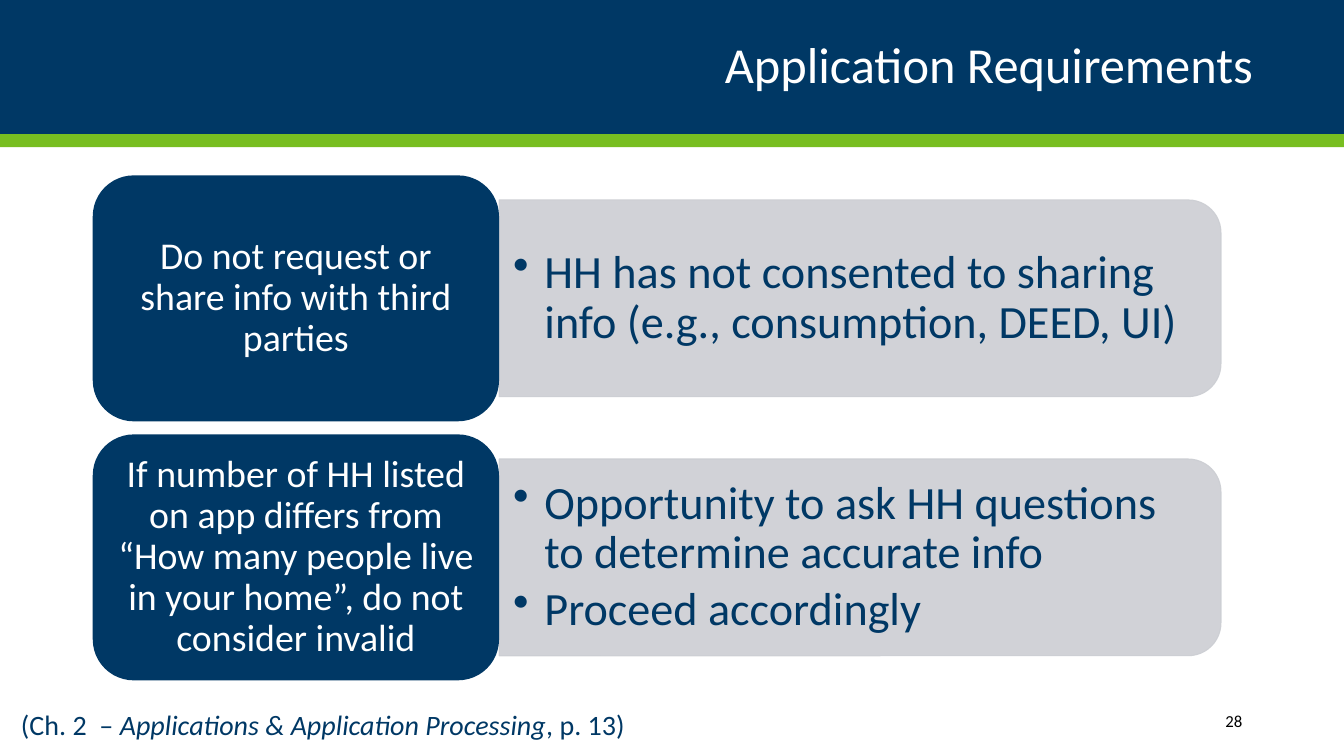
from pptx import Presentation
from pptx.dml.color import RGBColor
from pptx.enum.shapes import MSO_SHAPE as Shape
from pptx.enum.text import MSO_ANCHOR as Anchor, MSO_AUTO_SIZE as AutoSize, PP_ALIGN as Align
from pptx.oxml.ns import qn
from pptx.util import Inches, Pt
from lxml.etree import SubElement

TITLE = "Application Requirements"
ROWS = [
    ("Do not request or share info with third parties",
     ["HH has not consented to sharing info (e.g., consumption, DEED, UI)"]),
    ("If number of HH listed on app differs from “How many people live in your home”, "
     "do not consider invalid",
     ["Opportunity to ask HH questions to determine accurate info", "Proceed accordingly"]),
]
REFERENCE = [("(Ch. 2\u00a0 – ", False), ("Applications & Application Processing", True),
             (", p. 13)", False)]
PAGE_NUMBER = "28"

FONT = "Calibri"
NAVY = RGBColor(0x00, 0x38, 0x65)
GREEN = RGBColor(0x78, 0xBE, 0x21)
GRAY = RGBColor(0xCC, 0xCE, 0xD3)
WHITE = RGBColor(0xFF, 0xFF, 0xFF)
BLACK = RGBColor(0x00, 0x00, 0x00)

WIDTH, HEIGHT = 13.33, 7.5
HEADER_HEIGHT, STRIPE_HEIGHT = 1.33, 0.13
CARD_LEFT, CARD_TOP, CARD_WIDTH, CARD_HEIGHT = 0.92, 1.74, 4.03, 2.44
ROW_PITCH = 2.57
PANEL_WIDTH, PANEL_HEIGHT = 7.16, 0.8 * CARD_HEIGHT
BULLET_INDENT = 0.31


def box(left, top, width, height):
    return [Inches(value) for value in (left, top, width, height)]


def add_shape(slide, kind, bounds, color):
    shape = slide.shapes.add_shape(kind, *box(*bounds))
    shape.shadow.inherit = False
    shape.fill.solid()
    shape.fill.fore_color.rgb = color
    shape.line.fill.background()
    return shape


def set_frame(shape, side=0.1, edge=0.05, anchor=Anchor.MIDDLE):
    frame = shape.text_frame
    frame.word_wrap = True
    frame.auto_size = AutoSize.NONE
    frame.vertical_anchor = anchor
    frame.margin_left = frame.margin_right = Inches(side)
    frame.margin_top = frame.margin_bottom = Inches(edge)
    return frame


def style(paragraph, size, color, align=Align.LEFT, line_spacing=0.9):
    paragraph.alignment = align
    paragraph.line_spacing = line_spacing
    paragraph.font.name = FONT
    paragraph.font.size = Pt(size)
    paragraph.font.color.rgb = color


def add_bullet(paragraph):
    properties = paragraph._p.get_or_add_pPr()
    properties.set("marL", str(Inches(BULLET_INDENT)))
    properties.set("indent", str(-Inches(BULLET_INDENT)))
    bullet = SubElement(properties, qn("a:buChar"))
    bullet.set("char", "•")
    defaults = properties.find(qn("a:defRPr"))
    if defaults is not None:
        defaults.addprevious(bullet)


def add_panel(slide, middle, bullets):
    """Gray panel, turned so its round corners face right, with its bullets."""
    left = CARD_LEFT + CARD_WIDTH
    center = left + PANEL_WIDTH / 2
    panel = add_shape(slide, Shape.ROUND_2_SAME_RECTANGLE,
                      (center - PANEL_HEIGHT / 2, middle - PANEL_WIDTH / 2,
                       PANEL_HEIGHT, PANEL_WIDTH), GRAY)
    panel.rotation = 90
    panel.line.color.rgb = GRAY
    panel.line.width = Pt(0.75)
    for color in panel._element.spPr.iter(qn("a:srgbClr")):
        SubElement(color, qn("a:alpha")).set("val", "90000")

    text_height = PANEL_HEIGHT - 0.2
    text_box = slide.shapes.add_textbox(
        *box(left, middle - text_height / 2, PANEL_WIDTH - 0.1, text_height))
    frame = set_frame(text_box, 0.14, 0.07)
    for index, text in enumerate(bullets):
        paragraph = frame.add_paragraph() if index else frame.paragraphs[0]
        paragraph.text = text
        style(paragraph, 33, NAVY)
        paragraph.space_after = Pt(5)
        add_bullet(paragraph)


def add_card(slide, top, text):
    card = add_shape(slide, Shape.ROUNDED_RECTANGLE,
                     (CARD_LEFT, top, CARD_WIDTH, CARD_HEIGHT), NAVY)
    paragraph = set_frame(card, 0.11, 0.06).paragraphs[0]
    paragraph.text = text
    style(paragraph, 27, WHITE, Align.CENTER)


def add_header(slide):
    add_shape(slide, Shape.RECTANGLE, (0, HEADER_HEIGHT, WIDTH, STRIPE_HEIGHT), GREEN)
    title = slide.shapes.title
    title.left, title.top, title.width, title.height = box(0, 0, WIDTH, HEADER_HEIGHT)
    title.fill.solid()
    title.fill.fore_color.rgb = NAVY
    paragraph = set_frame(title, 0.9).paragraphs[0]
    paragraph.text = TITLE
    style(paragraph, 36, WHITE, Align.RIGHT)


def add_footer(slide):
    reference = add_shape(slide, Shape.RECTANGLE, (0.11, 6.97, 7.03, HEIGHT - 6.97), WHITE)
    paragraph = set_frame(reference, anchor=Anchor.TOP).paragraphs[0]
    for text, italic in REFERENCE:
        run = paragraph.add_run()
        run.text = text
        run.font.italic = italic
    style(paragraph, 20, NAVY, line_spacing=1.0)
    paragraph.space_before = paragraph.space_after = Pt(10)

    number = slide.shapes.add_textbox(*box(10.82, 6.95, 1.6, 0.4))
    paragraph = set_frame(number).paragraphs[0]
    paragraph.text = PAGE_NUMBER
    style(paragraph, 12, BLACK, Align.RIGHT, 1.0)


def main():
    presentation = Presentation()
    presentation.slide_width, presentation.slide_height = Inches(WIDTH), Inches(HEIGHT)
    slide = presentation.slides.add_slide(presentation.slide_layouts[5])
    add_header(slide)
    add_footer(slide)
    for index, (heading, bullets) in enumerate(ROWS):
        top = CARD_TOP + index * ROW_PITCH
        add_panel(slide, top + CARD_HEIGHT / 2, bullets)
        add_card(slide, top, heading)
    presentation.save("out.pptx")


if __name__ == "__main__":
    main()
